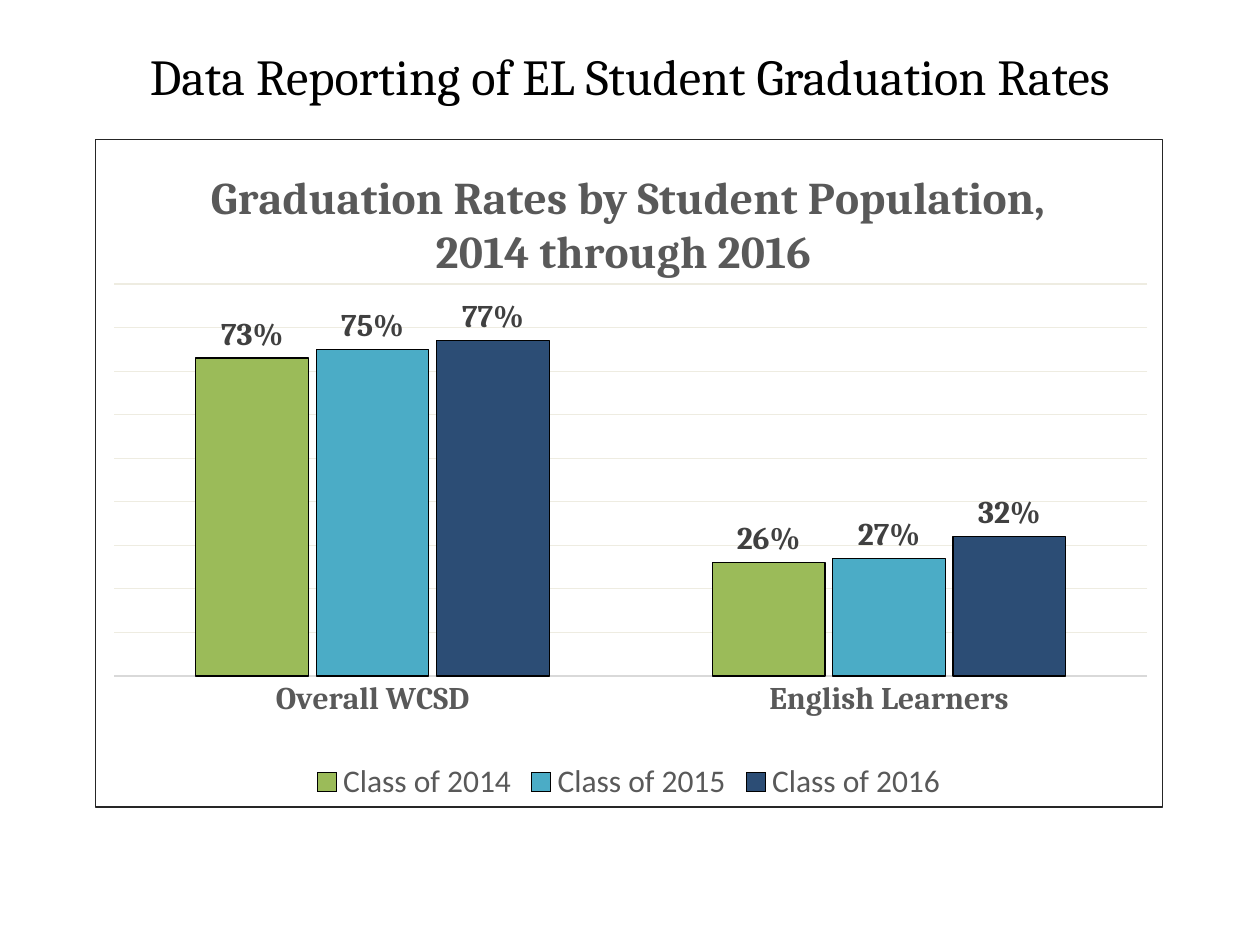
import pptx
import pptx.chart.data
import pptx.dml.color
import pptx.enum.chart
import pptx.enum.text
import pptx.oxml
import pptx.oxml.ns
import pptx.util

Pt = pptx.util.Pt

COLORS = {
    "black": "000000",
    "title": "595959",
    "label": "404040",
    "axis": "D9D9D9",
    "grid": "EEECE1",
    "border": "262626",
}
CATEGORIES = ["Overall WCSD", "English Learners"]
CLASSES = [
    ("Class of 2014", (0.73, 0.26), "9BBB59"),
    ("Class of 2015", (0.75, 0.27), "4BACC6"),
    ("Class of 2016", (0.77, 0.32), "2C4D75"),
]
PLOT_AREA = {"x": 0.018, "y": 0.217, "w": 0.968, "h": 0.587}


def rgb(color):
    return pptx.dml.color.RGBColor.from_string(color)


def set_font(font, name, size, color, bold=False):
    font.name = name
    font.size = Pt(size)
    font.bold = bold
    font.color.rgb = rgb(color)


def set_line(line, color):
    line.color.rgb = rgb(color)
    line.width = Pt(0.75)


def add_heading(slide, text):
    heading = slide.shapes.add_textbox(Pt(36), Pt(15.84), Pt(648), Pt(54))
    frame = heading.text_frame
    frame.word_wrap = True
    frame.vertical_anchor = pptx.enum.text.MSO_ANCHOR.MIDDLE
    frame.text = text
    paragraph = frame.paragraphs[0]
    paragraph.alignment = pptx.enum.text.PP_ALIGN.CENTER
    set_font(paragraph.font, "Cambria", 28.8, COLORS["black"])


def add_rates_chart(slide):
    rates = pptx.chart.data.CategoryChartData(number_format="0%")
    rates.categories = CATEGORIES
    for name, values, _ in CLASSES:
        rates.add_series(name, values)
    chart = slide.shapes.add_chart(
        pptx.enum.chart.XL_CHART_TYPE.COLUMN_CLUSTERED,
        Pt(54), Pt(79.2), Pt(610.56), Pt(382.32), rates,
    ).chart
    set_font(chart.font, "League Spartan", 10, COLORS["black"])
    return chart


def style_title(chart, text):
    chart.has_title = True
    frame = chart.chart_title.text_frame
    frame.text = text
    set_font(frame.paragraphs[0].font, "Cambria", 26, COLORS["title"], True)
    chart.chart_title.include_in_layout = False


def style_columns(chart):
    plot = chart.plots[0]
    plot.gap_width = 145
    plot.overlap = -7
    plot.vary_by_categories = False
    for series, (_, _, color) in zip(plot.series, CLASSES):
        series.format.fill.solid()
        series.format.fill.fore_color.rgb = rgb(color)
        set_line(series.format.line, COLORS["black"])
        labels = series.data_labels
        labels.show_value = True
        labels.number_format = "0%"
        labels.number_format_is_linked = False
        labels.position = pptx.enum.chart.XL_LABEL_POSITION.OUTSIDE_END
        set_font(labels.font, "Cambria", 18, COLORS["label"], True)


def style_axes(chart):
    populations = chart.category_axis
    populations.major_tick_mark = pptx.enum.chart.XL_TICK_MARK.NONE
    set_line(populations.format.line, COLORS["axis"])
    set_font(populations.tick_labels.font, "Cambria", 18, COLORS["title"], True)

    percentages = chart.value_axis
    percentages.visible = False
    percentages.minimum_scale = 0
    percentages.maximum_scale = 0.9
    percentages.major_unit = 0.1
    percentages.has_major_gridlines = True
    set_line(percentages.major_gridlines.format.line, COLORS["grid"])


def style_legend(chart):
    chart.has_legend = True
    chart.legend.position = pptx.enum.chart.XL_LEGEND_POSITION.BOTTOM
    chart.legend.include_in_layout = False
    set_font(chart.legend.font, "Calibri", 18, COLORS["title"])


def place_plot_area(chart):
    plot_area = chart.element.chart.plotArea
    for layout in plot_area.findall(pptx.oxml.ns.qn("c:layout")):
        plot_area.remove(layout)
    modes = "".join(f'<c:{side}Mode val="edge"/>' for side in "xy")
    sizes = "".join(f'<c:{key} val="{value}"/>' for key, value in PLOT_AREA.items())
    plot_area.insert(0, pptx.oxml.parse_xml(
        f'<c:layout {pptx.oxml.ns.nsdecls("c")}><c:manualLayout>'
        f'<c:layoutTarget val="inner"/>{modes}{sizes}'
        '</c:manualLayout></c:layout>'
    ))


def add_border(chart):
    chart.element.chart.addnext(pptx.oxml.parse_xml(
        f'<c:spPr {pptx.oxml.ns.nsdecls("c", "a")}><a:noFill/>'
        f'<a:ln w="{Pt(0.75)}"><a:solidFill><a:srgbClr val="{COLORS["border"]}"/>'
        '</a:solidFill></a:ln></c:spPr>'
    ))


def main():
    deck = pptx.Presentation()
    deck.slide_width = Pt(720)
    deck.slide_height = Pt(540)
    slide = deck.slides.add_slide(deck.slide_layouts[6])
    add_heading(slide, "Data Reporting of EL Student Graduation Rates")
    chart = add_rates_chart(slide)
    style_title(chart, "Graduation Rates by Student Population, 2014 through 2016 ")
    style_columns(chart)
    style_axes(chart)
    style_legend(chart)
    place_plot_area(chart)
    add_border(chart)
    deck.save("out.pptx")


if __name__ == "__main__":
    main()
